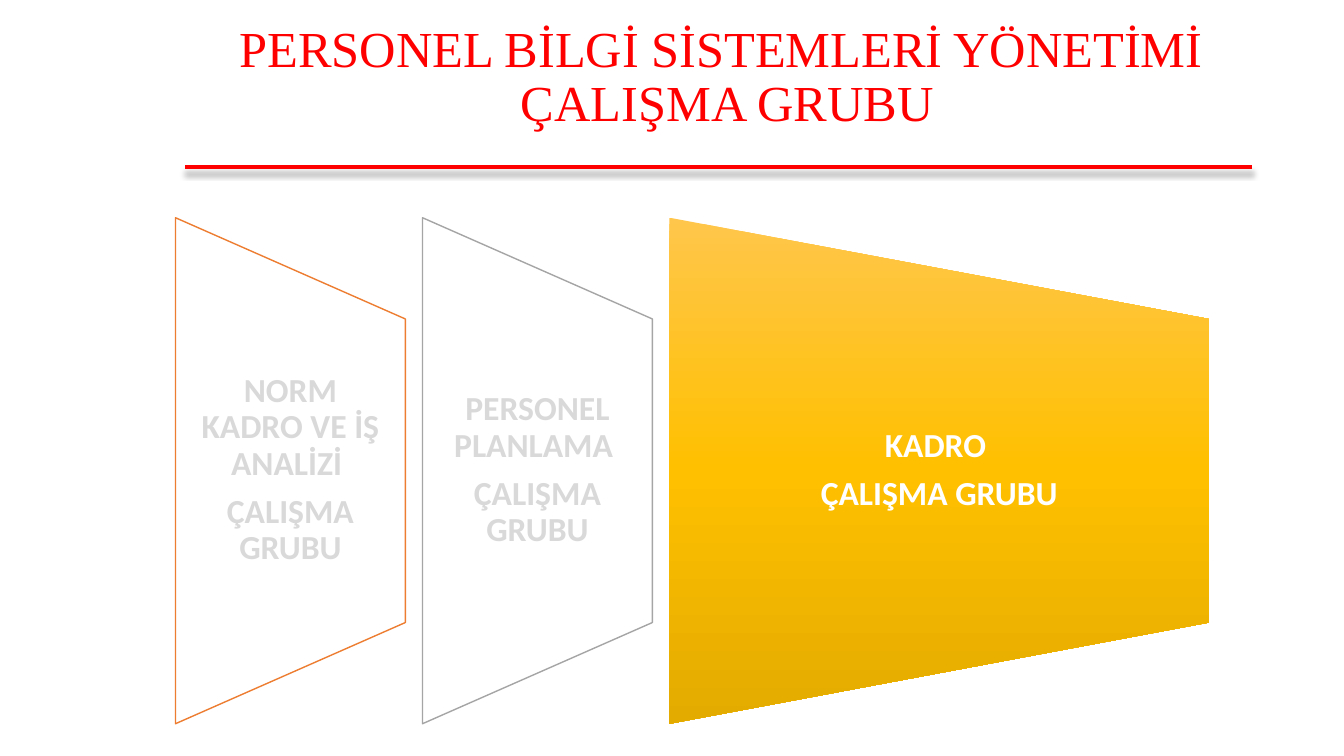
import pptx
import pptx.dml.color
import pptx.enum.shapes
import pptx.enum.text
import pptx.oxml
import pptx.oxml.ns
import pptx.util
from pptx.util import Inches

NS = 'xmlns:a="http://schemas.openxmlformats.org/drawingml/2006/main"'
SHADE = [(0, "FFC64B"), (50, "FFC000"), (100, "E3AB00")]
TALL, MID = 5.02, 4.67


def paint(code):
    return pptx.dml.color.RGBColor.from_string(code)


def put(item, form):
    for key, value in form.items():
        setattr(item, key, value)


class Deck:
    """Holds the text styles and the current slide."""

    head = {"name": "Times New Roman", "size": pptx.util.Pt(36), "bold": False}
    label = {"name": "Calibri", "size": pptx.util.Pt(24), "bold": True}
    lines = {"alignment": pptx.enum.text.PP_ALIGN.CENTER, "line_spacing": 0.9}
    frame = {
        "word_wrap": True,
        "auto_size": pptx.enum.text.MSO_AUTO_SIZE.NONE,
        "vertical_anchor": pptx.enum.text.MSO_ANCHOR.MIDDLE,
    }
    inset = {
        "margin_left": Inches(0.17), "margin_right": Inches(0.17),
        "margin_top": 0, "margin_bottom": 0,
    }

    def __init__(self, show):
        self.slide = show.slides.add_slide(show.slide_layouts[5])
        self.group = None

    def letter(self, frame, parts, font, tone, after=0):
        put(frame, self.frame)
        frame.text = "\n".join(parts)
        for para in frame.paragraphs:
            put(para, self.lines)
            put(para, {"space_before": 0, "space_after": pptx.util.Pt(after)})
            for run in para.runs:
                put(run.font, font)
                run.font.color.rgb = paint(tone)

    def title(self, text, left, top, width, height):
        box = self.slide.shapes.title
        put(box, {"left": Inches(left), "top": Inches(top),
                  "width": Inches(width), "height": Inches(height)})
        self.letter(box.text_frame, [text], self.head, "FF0000")

    def rule(self, start, end, top):
        line = self.slide.shapes.add_connector(
            pptx.enum.shapes.MSO_CONNECTOR.STRAIGHT,
            Inches(start), Inches(top), Inches(end), Inches(top))
        line.line.color.rgb = paint("FF0000")
        line.line.width = pptx.util.Pt(3)
        line._element.spPr.append(pptx.oxml.parse_xml(
            f'<a:effectLst {NS}><a:outerShdw blurRad="50800" dist="50800" '
            'dir="5400000" algn="t" rotWithShape="0"><a:srgbClr val="000000">'
            '<a:alpha val="25000"/></a:srgbClr></a:outerShdw></a:effectLst>'))

    def blend(self, shape, stops):
        shape.fill.solid()
        props = shape._element.spPr
        marks = "".join(f'<a:gs pos="{spot * 1000}"><a:srgbClr val="{code}"/></a:gs>'
                        for spot, code in stops)
        props.replace(props.find(pptx.oxml.ns.qn("a:solidFill")), pptx.oxml.parse_xml(
            f'<a:gradFill {NS} rotWithShape="0"><a:gsLst>{marks}</a:gsLst>'
            '<a:lin ang="5400000" scaled="0"/></a:gradFill>'))

    def panel(self, left, width, parts, tone, edge=None):
        self.group = self.group or self.slide.shapes.add_group_shape()
        shape = self.group.shapes.add_shape(
            pptx.enum.shapes.MSO_SHAPE.FLOWCHART_MANUAL_OPERATION,
            Inches(left + (width - TALL) / 2), Inches(MID - width / 2),
            Inches(TALL), Inches(width))
        shape.rotation = 270
        shape.shadow.inherit = False
        if edge:
            shape.fill.solid()
            shape.fill.fore_color.rgb = paint("FFFFFF")
            shape.line.color.rgb = paint(edge)
            shape.line.width = pptx.util.Pt(1)
        else:
            self.blend(shape, SHADE)
            shape.line.fill.background()
        box = self.group.shapes.add_textbox(
            Inches(left), Inches(MID - 1.51), Inches(width), Inches(3.01))
        put(box.text_frame, self.inset)
        self.letter(box.text_frame, parts, self.label, tone, 8.4)


def main():
    show = pptx.Presentation()
    put(show, {"slide_width": Inches(13.33), "slide_height": Inches(7.5)})
    deck = Deck(show)
    deck.rule(12.42, 1.84, 1.66)
    deck.title("PERSONEL BİLGİ SİSTEMLERİ YÖNETİMİ \vÇALIŞMA GRUBU",
               1.92, 0.17, 10.59, 1.21)
    panels = [
        ("NORM KADRO VE İŞ ANALİZİ ", 2.28, "D9D9D9", "ED7D31"),
        ("PERSONEL PLANLAMA ", 2.28, "D9D9D9", "A5A5A5"),
        ("KADRO ", 5.35, "FFFFFF", None),
    ]
    left = 1.74
    for name, width, tone, edge in panels:
        deck.panel(left, width, [name, "ÇALIŞMA GRUBU"], tone, edge)
        left += width + 0.17
    show.save("out.pptx")


if __name__ == "__main__":
    main()
